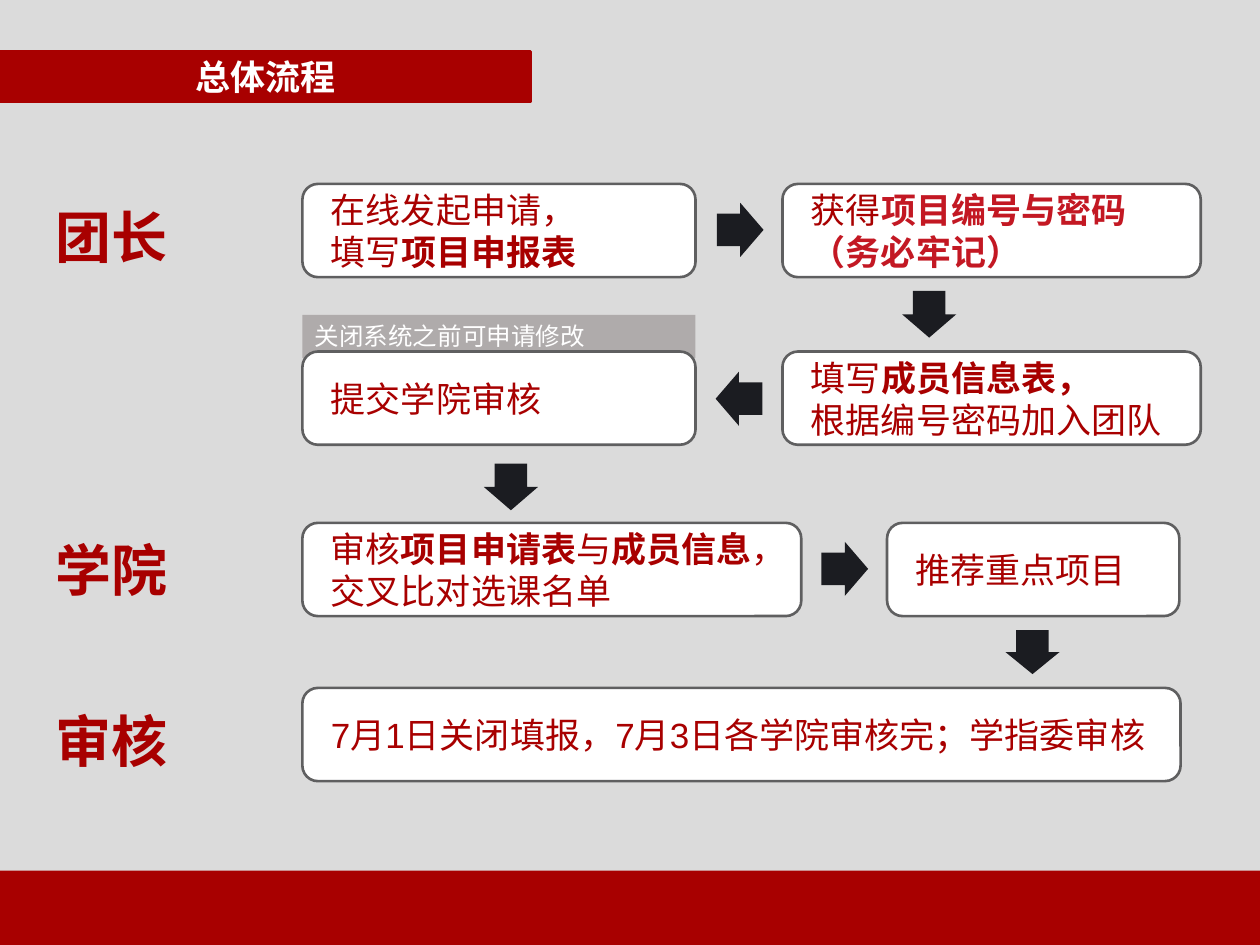
from dataclasses import dataclass
from typing import NamedTuple

from lxml.etree import SubElement
from pptx import Presentation
from pptx.dml.color import RGBColor
from pptx.enum.shapes import MSO_SHAPE
from pptx.enum.text import MSO_ANCHOR, PP_ALIGN
from pptx.oxml.ns import qn
from pptx.util import Inches, Pt


@dataclass(frozen=True)
class Theme:
    background: str = "DBDBDB"
    red: str = "A80000"
    warning: str = "C31823"
    white: str = "FFFFFF"
    border: str = "5F5F60"
    note: str = "AFABAB"
    arrow: str = "1B1C21"
    latin_font: str = "Arial"
    chinese_font: str = "Noto Sans CJK SC"
    note_size: int = 14
    body_size: int = 20
    label_size: int = 32
    border_width: float = 1.5


class Span(NamedTuple):
    text: str
    bold: bool = False
    color: str = ""


class Area(NamedTuple):
    column: float
    row: float
    columns: float
    rows: float


class Step(NamedTuple):
    column: float
    row: float
    columns: float
    lines: list[list[Span]]


class Arrow(NamedTuple):
    kind: MSO_SHAPE
    area: Area


THEME = Theme()
GRID_COLUMNS, GRID_ROWS = 100, 75
SLIDE_WIDTH, SLIDE_HEIGHT = Inches(10), Inches(7.5)
STEP_ROWS = 7.4
LEFT, RIGHT = 24, 62.1
LEADER_ROW, MEMBER_ROW, COLLEGE_ROW, REVIEW_ROW = 14.6, 27.9, 41.5, 54.6
STEP_INSET = Inches(0.19)

STEPS = [
    Step(LEFT, LEADER_ROW, 31.2, [
        [Span("在线发起申请，")],
        [Span("填写"), Span("项目申报表", True)],
    ]),
    Step(RIGHT, LEADER_ROW, 33.2, [
        [Span("获得"), Span("项目编号与密码（务必牢记）", True, THEME.warning)],
    ]),
    Step(RIGHT, MEMBER_ROW, 33.2, [
        [Span("填写"), Span("成员信息表，", True)],
        [Span("根据编号密码加入团队")],
    ]),
    Step(LEFT, MEMBER_ROW, 31.2, [[Span("提交学院审核")]]),
    Step(LEFT, COLLEGE_ROW, 39.6, [
        [Span("审核"), Span("项目申请表", True), Span("与"),
         Span("成员信息", True), Span("，交叉比对选课名单")],
    ]),
    Step(70.4, COLLEGE_ROW, 23.2, [[Span("推荐重点项目")]]),
    Step(LEFT, REVIEW_ROW, 69.7, [
        [Span("7月1日关闭填报，7月3日各学院审核完；学指委审核")],
    ]),
]

ARROWS = [
    Arrow(MSO_SHAPE.RIGHT_ARROW, Area(56.9, 16.1, 3.7, 4.3)),
    Arrow(MSO_SHAPE.DOWN_ARROW, Area(71.6, 23.1, 4.3, 3.7)),
    Arrow(MSO_SHAPE.LEFT_ARROW, Area(56.8, 29.5, 3.7, 4.3)),
    Arrow(MSO_SHAPE.DOWN_ARROW, Area(38.4, 36.8, 4.3, 3.7)),
    Arrow(MSO_SHAPE.RIGHT_ARROW, Area(65.2, 43, 3.7, 4.3)),
    Arrow(MSO_SHAPE.DOWN_ARROW, Area(79.8, 50, 4.3, 3.5)),
]

LABELS = {"团长": 15.6, "学院": 42, "审核": 55.6}


def place(area: Area) -> tuple[int, int, int, int]:
    across, down = SLIDE_WIDTH / GRID_COLUMNS, SLIDE_HEIGHT / GRID_ROWS
    return (round(area.column * across), round(area.row * down),
            round(area.columns * across), round(area.rows * down))


def draw_shape(slide, kind: MSO_SHAPE, area: Area, fill: str, line: str = ""):
    shape = slide.shapes.add_shape(kind, *place(area))
    shape.shadow.inherit = False
    shape.fill.solid()
    shape.fill.fore_color.rgb = RGBColor.from_string(fill)
    if line:
        shape.line.color.rgb = RGBColor.from_string(line)
        shape.line.width = Pt(THEME.border_width)
    else:
        shape.line.fill.background()
    return shape


def write(text_frame, lines: list[list[Span]], size: int, color: str,
          font_name: str = THEME.latin_font, alignment=PP_ALIGN.LEFT) -> None:
    text_frame.text = "\n".join("".join(span.text for span in line) for line in lines)
    for paragraph, line in zip(text_frame.paragraphs, lines):
        paragraph.text = line[0].text
        paragraph.alignment = alignment
        for span in line[1:]:
            paragraph.add_run().text = span.text
        for run, span in zip(paragraph.runs, line):
            run.font.name = font_name
            run.font.size = Pt(size)
            run.font.bold = span.bold
            run.font.color.rgb = RGBColor.from_string(span.color or color)
            properties = run.font._element
            SubElement(properties, qn("a:ea")).set("typeface", THEME.chinese_font)


def draw_step(slide, step: Step) -> None:
    area = Area(step.column, step.row, step.columns, STEP_ROWS)
    shape = draw_shape(slide, MSO_SHAPE.ROUNDED_RECTANGLE, area, THEME.white, THEME.border)
    frame = shape.text_frame
    frame.word_wrap = True
    frame.vertical_anchor = MSO_ANCHOR.MIDDLE
    frame.margin_left = frame.margin_right = STEP_INSET
    frame.margin_top = frame.margin_bottom = STEP_INSET
    write(frame, step.lines, THEME.body_size, THEME.red)


def draw_arrow(slide, arrow: Arrow) -> None:
    shape = draw_shape(slide, arrow.kind, arrow.area, THEME.arrow)
    shape.adjustments[0] = 0.6
    shape.adjustments[1] = 0.5


def draw_label(slide, text: str, row: float) -> None:
    box = slide.shapes.add_textbox(*place(Area(3.4, row, 11, 6.4)))
    box.text_frame.word_wrap = False
    write(box.text_frame, [[Span(text, True)]], THEME.label_size, THEME.red)


def draw_frame(slide) -> None:
    draw_shape(slide, MSO_SHAPE.RECTANGLE, Area(0, 69.1, GRID_COLUMNS, 5.9), THEME.red)
    banner = draw_shape(slide, MSO_SHAPE.RECTANGLE, Area(0, 4.1, 42.1, 4), THEME.red, THEME.red)
    banner.text_frame.vertical_anchor = MSO_ANCHOR.MIDDLE
    write(banner.text_frame, [[Span("总体流程", True)]], THEME.body_size, THEME.white,
          THEME.chinese_font, PP_ALIGN.CENTER)


def draw_note(slide) -> None:
    note = draw_shape(slide, MSO_SHAPE.RECTANGLE, Area(LEFT, 25, 31.2, 3.4), THEME.note)
    note.text_frame.vertical_anchor = MSO_ANCHOR.TOP
    write(note.text_frame, [[Span("关闭系统之前可申请修改")]], THEME.note_size, THEME.white)


def main() -> None:
    presentation = Presentation()
    presentation.slide_width, presentation.slide_height = SLIDE_WIDTH, SLIDE_HEIGHT
    slide = presentation.slides.add_slide(presentation.slide_layouts[6])
    slide.background.fill.solid()
    slide.background.fill.fore_color.rgb = RGBColor.from_string(THEME.background)
    draw_frame(slide)
    draw_note(slide)
    for step in STEPS:
        draw_step(slide, step)
    for arrow in ARROWS:
        draw_arrow(slide, arrow)
    for text, row in LABELS.items():
        draw_label(slide, text, row)
    presentation.save("out.pptx")


if __name__ == "__main__":
    main()
